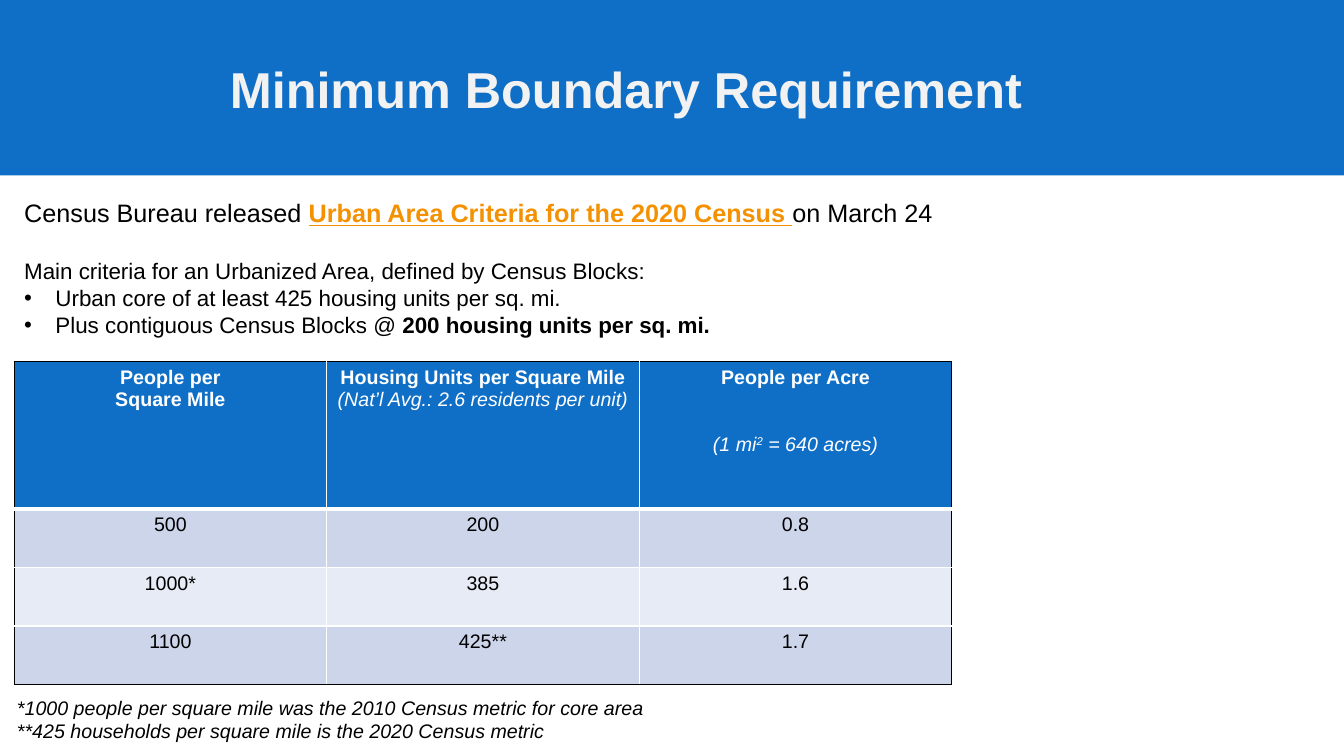
import dataclasses
import typing

import lxml.etree
import pptx
import pptx.dml.color
import pptx.enum.shapes
import pptx.enum.text
import pptx.oxml.ns
import pptx.util

PX = 9144  # 100 px to the inch
FONT = "Arial"
BLUE = pptx.dml.color.RGBColor(0x0F, 0x6F, 0xC6)
ORANGE = pptx.dml.color.RGBColor(0xF4, 0x91, 0x00)
PALE = pptx.dml.color.RGBColor(0xF2, 0xF2, 0xF2)
WHITE = pptx.dml.color.RGBColor(0xFF, 0xFF, 0xFF)
BLACK = pptx.dml.color.RGBColor(0x00, 0x00, 0x00)
DARK_BAND = pptx.dml.color.RGBColor(0xCC, 0xD5, 0xEA)
LIGHT_BAND = pptx.dml.color.RGBColor(0xE7, 0xEB, 0xF5)

LEFT = pptx.enum.text.PP_ALIGN.LEFT
CENTER = pptx.enum.text.PP_ALIGN.CENTER
BOLD = {"bold": True, "italic": False}
ITALIC = {"bold": False, "italic": True}
PLAIN = {"bold": False, "italic": False}
LINK = {"bold": True, "underline": True}


@dataclasses.dataclass(frozen=True)
class Run:
    """A stretch of text; a newline in it is a line break."""
    text: str
    style: dict[str, bool] = dataclasses.field(default_factory=lambda: PLAIN)
    color: typing.Optional[pptx.dml.color.RGBColor] = None
    superscript: bool = False


@dataclasses.dataclass(frozen=True)
class Paragraph:
    runs: tuple[Run, ...]
    size: int
    color: pptx.dml.color.RGBColor = BLACK
    align: pptx.enum.text.PP_ALIGN = LEFT
    space_before: int = 0
    bullet: bool = False


@dataclasses.dataclass(frozen=True)
class Box:
    left: int
    top: int
    width: int
    height: int

    def emu(self) -> tuple[int, int, int, int]:
        return tuple(side * PX for side in dataclasses.astuple(self))


TITLE = Paragraph((Run("Minimum Boundary Requirement", BOLD),), 36, PALE)
CRITERIA = (
    Paragraph((Run("Census Bureau released "),
               Run("Urban Area Criteria for the 2020 Census ", LINK, ORANGE),
               Run("on March 24")), 18),
    Paragraph((Run("Main criteria for an Urbanized Area, defined by Census Blocks:"),),
              16, space_before=21),
    Paragraph((Run("Urban core of at least 425 housing units per sq. mi."),),
              16, bullet=True),
    Paragraph((Run("Plus contiguous Census Blocks @ "),
               Run("200 housing units per sq. mi.", BOLD)), 16, bullet=True),
)
FOOTNOTES = tuple(
    Paragraph((Run(note, ITALIC),), 14)
    for note in ("*1000 people per square mile was the 2010 Census metric for core area",
                 "**425 households per square mile is the 2020 Census metric")
)


def heading(*runs: Run, space_before: int = 0) -> Paragraph:
    return Paragraph(runs, 14, WHITE, CENTER, space_before)


HEADINGS = (
    (heading(Run("People per\nSquare Mile", BOLD)),),
    (heading(Run("Housing Units per Square Mile\n", BOLD),
             Run("(Nat’l Avg.: 2.6 residents per unit)", ITALIC)),),
    (heading(Run("People per Acre", BOLD)),
     heading(Run("(1 mi", ITALIC), Run("2", ITALIC, superscript=True),
             Run(" = 640 acres)", ITALIC), space_before=32)),
)
DENSITIES = (("500", "200", "0.8"), ("1000*", "385", "1.6"), ("1100", "425**", "1.7"))
COLUMN_WIDTH, HEADING_HEIGHT, DENSITY_HEIGHT = 310, 146, 58


def set_bullet(paragraph: typing.Any, bullet: bool) -> None:
    properties = paragraph._p.get_or_add_pPr()
    indent = 31 * PX if bullet else 0
    properties.set("marL", str(indent))
    properties.set("indent", str(-indent))
    if bullet:
        lxml.etree.SubElement(properties, pptx.oxml.ns.qn("a:buFont"), typeface=FONT)
        lxml.etree.SubElement(properties, pptx.oxml.ns.qn("a:buChar"), char="•")
    else:
        lxml.etree.SubElement(properties, pptx.oxml.ns.qn("a:buNone"))


def write_run(paragraph: typing.Any, run: Run, content: Paragraph) -> None:
    for number, line in enumerate(run.text.split("\n")):
        if number:
            paragraph.add_line_break()
        if not line:
            continue
        piece = paragraph.add_run()
        piece.text = line
        font_format = {"name": FONT, "size": pptx.util.Pt(content.size), **run.style}
        for attribute, value in font_format.items():
            setattr(piece.font, attribute, value)
        piece.font.color.rgb = run.color or content.color
        if run.superscript:
            piece._r.get_or_add_rPr().set("baseline", "30000")


def write_text(frame: typing.Any, contents: typing.Sequence[Paragraph]) -> None:
    for number, content in enumerate(contents):
        paragraph = frame.add_paragraph() if number else frame.paragraphs[0]
        set_bullet(paragraph, content.bullet)
        paragraph.alignment = content.align
        paragraph.space_before = pptx.util.Pt(content.space_before)
        for run in content.runs:
            write_run(paragraph, run, content)


def fill_box(shape: typing.Any, box: Box, contents: typing.Sequence[Paragraph],
             anchor: pptx.enum.text.MSO_ANCHOR = pptx.enum.text.MSO_ANCHOR.TOP) -> None:
    shape.left, shape.top, shape.width, shape.height = box.emu()
    frame_format = {"word_wrap": True, "vertical_anchor": anchor,
                    "auto_size": pptx.enum.text.MSO_AUTO_SIZE.NONE}
    for attribute, value in frame_format.items():
        setattr(shape.text_frame, attribute, value)
    write_text(shape.text_frame, contents)


def draw_border(cell: typing.Any, side: str, color: pptx.dml.color.RGBColor,
                points: int) -> None:
    line = lxml.etree.SubElement(cell._tc.get_or_add_tcPr(), pptx.oxml.ns.qn(f"a:ln{side}"),
                                 w=str(pptx.util.Pt(points)))
    fill = lxml.etree.SubElement(line, pptx.oxml.ns.qn("a:solidFill"))
    lxml.etree.SubElement(fill, pptx.oxml.ns.qn("a:srgbClr"), val=str(color))


def add_density_table(slide: typing.Any, box: Box) -> None:
    body = [[(Paragraph((Run(value),), 14, align=CENTER),) for value in row]
            for row in DENSITIES]
    rows = [HEADINGS, *body]
    last_row, last_column = len(rows) - 1, len(HEADINGS) - 1
    table = slide.shapes.add_table(len(rows), len(HEADINGS), *box.emu()).table
    table.first_row = table.horz_banding = False
    for column in table.columns:
        column.width = COLUMN_WIDTH * PX
    for r, row in enumerate(rows):
        table.rows[r].height = (DENSITY_HEIGHT if r else HEADING_HEIGHT) * PX
        for c, contents in enumerate(row):
            cell = table.cell(r, c)
            outer = {"L": c == 0, "R": c == last_column, "T": r == 0, "B": r == last_row}
            for side, is_outer in outer.items():
                under_heading = (r, side) in ((0, "B"), (1, "T"))
                draw_border(cell, side, BLACK if is_outer else WHITE,
                            3 if under_heading else 1)
            cell.fill.solid()
            cell.fill.fore_color.rgb = (
                BLUE if r == 0 else DARK_BAND if r % 2 else LIGHT_BAND)
            write_text(cell.text_frame, contents)


def add_header_band(slide: typing.Any, box: Box) -> None:
    """Draw the blue band behind everything else."""
    band = slide.shapes.add_shape(pptx.enum.shapes.MSO_SHAPE.RECTANGLE, *box.emu())
    band.shadow.inherit = False
    band.fill.solid()
    band.fill.fore_color.rgb = BLUE
    band.line.fill.background()
    slide.shapes._spTree.insert(2, band._element)


def main() -> None:
    presentation = pptx.Presentation()
    presentation.slide_width, presentation.slide_height = 1333 * PX, 750 * PX
    slide = presentation.slides.add_slide(presentation.slide_layouts[1])
    add_header_band(slide, Box(0, 0, 1333, 174))
    fill_box(slide.shapes.title, Box(218, 52, 814, 71), (TITLE,),
             pptx.enum.text.MSO_ANCHOR.MIDDLE)
    add_density_table(slide, Box(14, 359, 3 * COLUMN_WIDTH, 320))
    footnotes = Box(7, 685, 644, 57)
    fill_box(slide.shapes.add_textbox(*footnotes.emu()), footnotes, FOOTNOTES)
    fill_box(slide.placeholders[1], Box(14, 191, 929, 205), CRITERIA)
    presentation.save("out.pptx")


if __name__ == "__main__":
    main()
